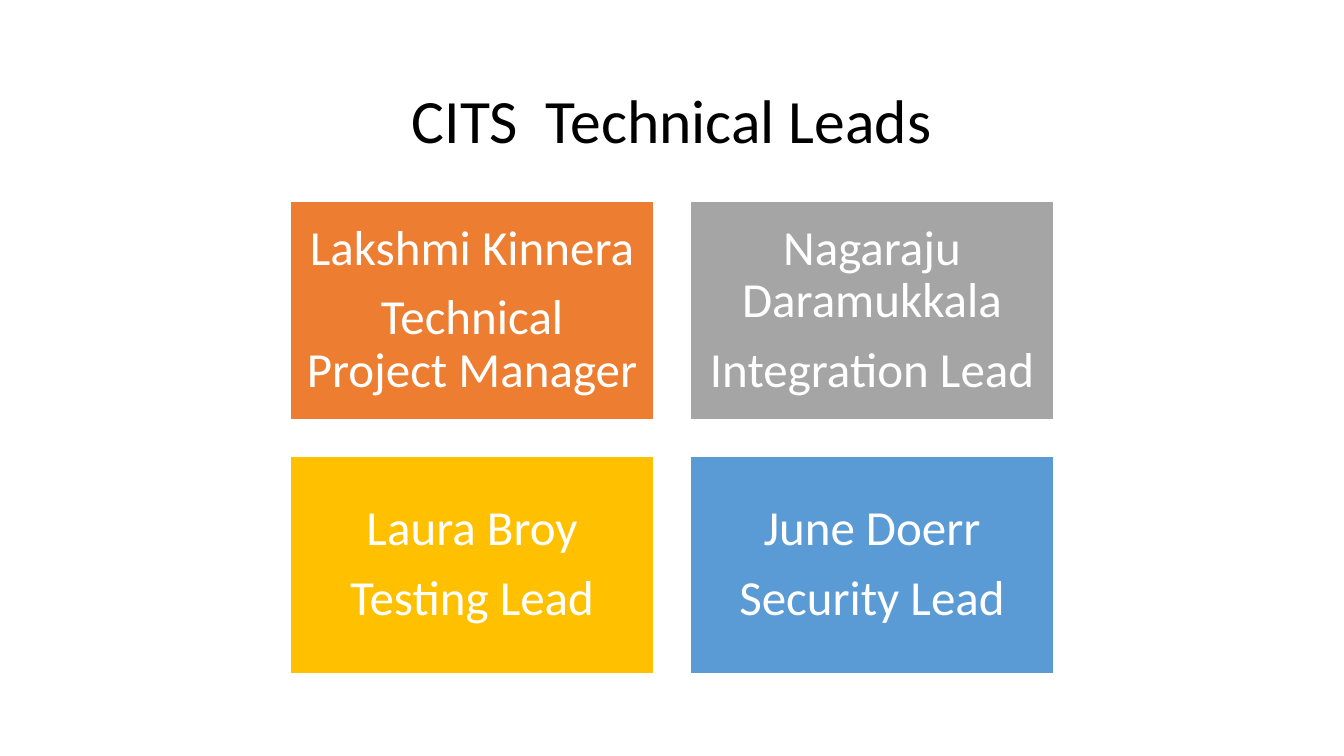
from pptx import Presentation
from pptx.dml.color import RGBColor
from pptx.enum.shapes import MSO_SHAPE as Shape
from pptx.enum.text import MSO_ANCHOR as Anchor, MSO_AUTO_SIZE as AutoSize, PP_ALIGN as Align
from pptx.util import Cm, Pt

BLACK = RGBColor(0x00, 0x00, 0x00)
WHITE = RGBColor(0xFF, 0xFF, 0xFF)
ORANGE = RGBColor(0xED, 0x7D, 0x31)
GRAY = RGBColor(0xA5, 0xA5, 0xA5)
GOLD = RGBColor(0xFF, 0xC0, 0x00)
BLUE = RGBColor(0x5B, 0x9B, 0xD5)

FONT = "Calibri"
TITLE_ONLY = 5
COLUMNS = 2
CARD_LEFT, CARD_TOP = 7.32, 5.08
CARD_WIDTH, CARD_HEIGHT, CARD_GAP = 9.16, 5.49, 0.92

LEADS = [
    ("Lakshmi Kinnera", "Technical Project Manager", ORANGE),
    ("Nagaraju Daramukkala", "Integration Lead", GRAY),
    ("Laura Broy", "Testing Lead", GOLD),
    ("June Doerr", "Security Lead", BLUE),
]


def write_paragraph(paragraph, text, *, size, color, space_after=0):
    """Fill a paragraph with centred, formatted text."""
    paragraph.text = text
    paragraph.alignment = Align.CENTER
    paragraph.line_spacing = 0.9
    paragraph.space_after = Pt(space_after)
    paragraph.font.name = FONT
    paragraph.font.size = Pt(size)
    paragraph.font.color.rgb = color


def set_title(slide, text):
    """Place and write the slide title."""
    title = slide.shapes.title
    title.left, title.top = Cm(2.33), Cm(1.55)
    title.width, title.height = Cm(29.21), Cm(3.15)
    frame = title.text_frame
    frame.vertical_anchor = Anchor.MIDDLE
    frame.auto_size = AutoSize.NONE
    write_paragraph(frame.paragraphs[0], text, size=44, color=BLACK)


def add_card(slide, left, top, name, role, color):
    """Add a coloured card with a person's name and role."""
    card = slide.shapes.add_shape(
        Shape.RECTANGLE, Cm(left), Cm(top), Cm(CARD_WIDTH), Cm(CARD_HEIGHT)
    )
    card.shadow.inherit = False
    card.fill.solid()
    card.fill.fore_color.rgb = color
    card.line.color.rgb = WHITE
    card.line.width = Pt(1)
    frame = card.text_frame
    frame.word_wrap = True
    frame.vertical_anchor = Anchor.MIDDLE
    frame.margin_left = frame.margin_right = Cm(0.37)
    frame.margin_top = frame.margin_bottom = Cm(0.37)
    write_paragraph(frame.paragraphs[0], name, size=35, color=WHITE, space_after=12)
    write_paragraph(frame.add_paragraph(), role, size=35, color=WHITE, space_after=12)


def main():
    """Build the slide of technical leads."""
    presentation = Presentation()
    presentation.slide_width, presentation.slide_height = Cm(33.87), Cm(19.05)
    slide = presentation.slides.add_slide(presentation.slide_layouts[TITLE_ONLY])
    set_title(slide, "CITS  Technical Leads")
    for index, (name, role, color) in enumerate(LEADS):
        row, column = divmod(index, COLUMNS)
        left = CARD_LEFT + column * (CARD_WIDTH + CARD_GAP)
        top = CARD_TOP + row * (CARD_HEIGHT + CARD_GAP)
        add_card(slide, left, top, name, role, color)
    presentation.save("out.pptx")


if __name__ == "__main__":
    main()
